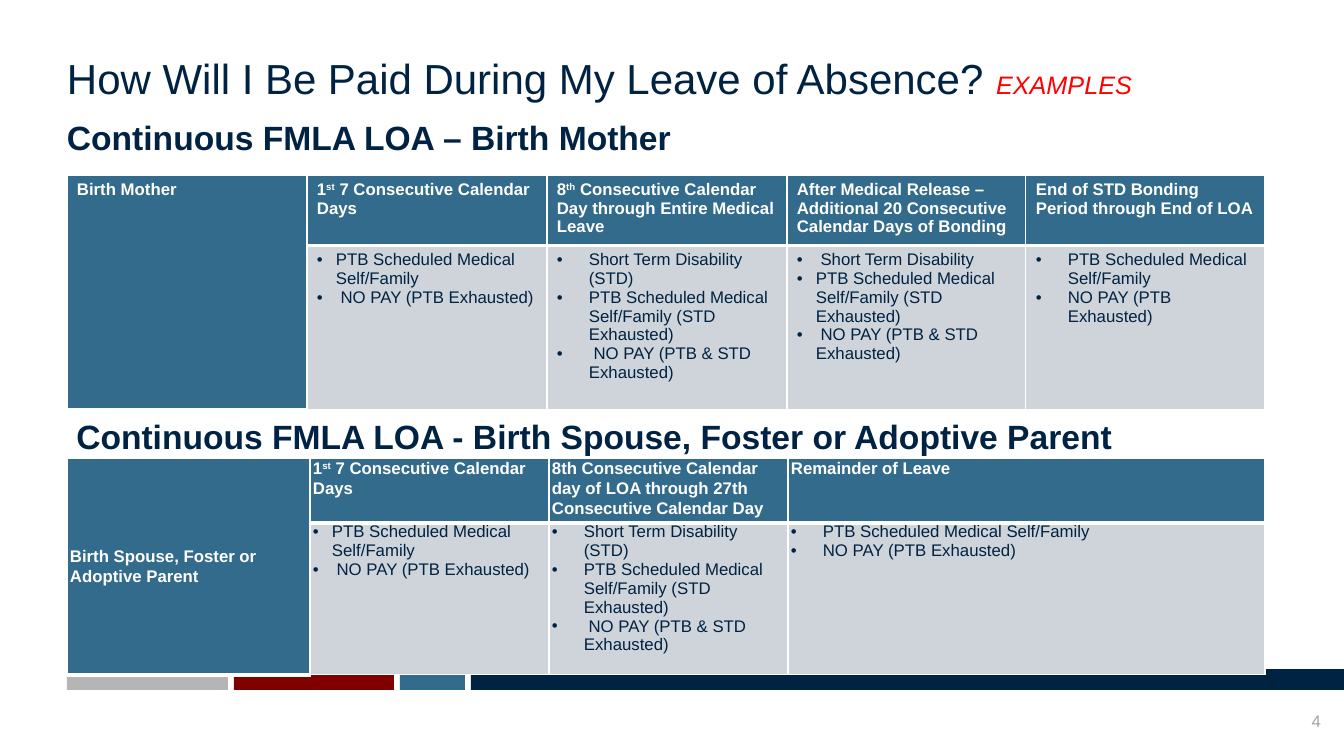
"""Build the leave-of-absence pay examples slide."""
from lxml import etree
from pptx import Presentation, util as u
from pptx.dml.color import RGBColor
from pptx.enum import shapes, text
from pptx.oxml import ns

COLORS = {"navy": "002243", "blue": "326B8B", "maroon": "800000", "silver": "B4B5B4",
          "pale": "CED4DA", "white": "FFFFFF", "red": "FF0000", "gray": "A6A6A6"}
FONT = "Arial"
SLIDE = (1344, 756)
LEFT = 67
NARROW, WIDE = 19, 32

BAR_TOP, BAR_HEIGHT = 669, 21
BARS = [(471, 873, "navy"), (400, 65, "blue"), (234, 160, "maroon"), (67, 161, "silver")]

TITLE_FORMAT = {"size": 30, "color": "navy"}
TAG_FORMAT = {"size": 18, "color": "red", "italic": True}
HEADING_FORMAT = {"size": 24, "color": "navy", "bold": True}
PAGE_FORMAT = {"size": 12, "color": "gray"}
HEAD_FORMAT = {"size": 12, "color": "white", "bold": True}
BODY_FORMAT = {"size": 12, "color": "navy", "bold": False}

TOP, BOTTOM = text.MSO_ANCHOR.TOP, text.MSO_ANCHOR.BOTTOM
START, END = text.PP_ALIGN.LEFT, text.PP_ALIGN.RIGHT
CAPTIONS = [
    ((LEFT, 52, 1221, 51), 0, BOTTOM, START,
     [("How Will I Be Paid During My Leave of Absence? ", TITLE_FORMAT),
      ("EXAMPLES", TAG_FORMAT)]),
    ((LEFT, 103, 921, 51), 14, TOP, START,
     [("Continuous FMLA LOA – Birth Mother", HEADING_FORMAT)]),
    ((LEFT, 402, 1133, 55), 14, TOP, START,
     [(" Continuous FMLA LOA - Birth Spouse, Foster or Adoptive Parent", HEADING_FORMAT)]),
    ((1287, 711, 34, 20), 0, BOTTOM, END, [("4", PAGE_FORMAT)]),
]

FIRST_WEEK = ("1^st^ 7 Consecutive Calendar Days", NARROW,
              ["PTB Scheduled Medical Self/Family", " NO PAY (PTB Exhausted)"])
DISABILITY = ["Short Term Disability (STD)",
              "PTB Scheduled Medical Self/Family (STD Exhausted)",
              " NO PAY (PTB & STD Exhausted)"]
REMAINDER = ["PTB Scheduled Medical Self/Family", "NO PAY (PTB Exhausted)"]

SCHEDULES = [
    {"who": "Birth Mother", "top": 175, "columns": [240, 240, 240, 239, 239],
     "rows": [67, 164], "margins": (10, 5), "spacing": 1.0, "anchor": TOP,
     "periods": [
         FIRST_WEEK,
         ("8^th^ Consecutive Calendar Day through Entire Medical Leave", WIDE, DISABILITY),
         ("After Medical Release – Additional 20 Consecutive Calendar Days of Bonding",
          NARROW, [" Short Term Disability", *DISABILITY[1:]]),
         ("End of STD Bonding Period through End of LOA", WIDE, REMAINDER)]},
    {"who": "Birth Spouse, Foster or Adoptive Parent", "top": 458,
     "columns": [243, 239, 239, 477], "rows": [59, 152], "margins": (3, 0),
     "spacing": 1.07, "anchor": text.MSO_ANCHOR.MIDDLE,
     "periods": [
         FIRST_WEEK,
         ("8th Consecutive Calendar day of LOA through 27th Consecutive Calendar Day",
          WIDE, DISABILITY),
         ("Remainder of Leave", WIDE, REMAINDER)]},
]


def px(length):
    return u.Emu(round(length * 914400 / 100.8))


def rgb(name):
    return RGBColor.from_string(COLORS[name])


def add_run(paragraph, words, style, raised=False):
    run = paragraph.add_run()
    run.text = words
    values = {**style, "name": FONT, "size": u.Pt(style["size"])}
    run.font.color.rgb = rgb(values.pop("color"))
    for key, value in values.items():
        setattr(run.font, key, value)
    if raised:
        run._r.get_or_add_rPr().set("baseline", "30000")


def add_bullet(paragraph, indent):
    properties = paragraph._p.get_or_add_pPr()
    properties.set("marL", str(px(indent)))
    properties.set("indent", str(-px(indent)))
    bullet_font = etree.SubElement(properties, ns.qn("a:buFont"))
    bullet_font.set("typeface", FONT)
    etree.SubElement(properties, ns.qn("a:buChar")).set("char", "•")


def format_cell(cell, fill, margins, bottom_width):
    side, edge = map(px, margins)
    for key, value in {"margin_left": side, "margin_right": side,
                       "margin_top": edge, "margin_bottom": edge}.items():
        setattr(cell, key, value)
    cell.fill.solid()
    cell.fill.fore_color.rgb = rgb(fill)
    properties = cell._tc.get_or_add_tcPr()
    for place, (border, width) in enumerate(
            [("lnL", 1), ("lnR", 1), ("lnT", 1), ("lnB", bottom_width)]):
        line = etree.Element(ns.qn("a:" + border), w=str(u.Pt(width)))
        solid = etree.SubElement(line, ns.qn("a:solidFill"))
        etree.SubElement(solid, ns.qn("a:srgbClr")).set("val", COLORS["white"])
        properties.insert(place, line)


def fill_heading(cell, words, schedule):
    format_cell(cell, "blue", schedule["margins"], 3)
    paragraph = cell.text_frame.paragraphs[0]
    paragraph.line_spacing = schedule["spacing"]
    for place, part in enumerate(words.split("^")):
        add_run(paragraph, part, HEAD_FORMAT, raised=place % 2 == 1)


def fill_payments(cell, payments, indent, schedule):
    format_cell(cell, "pale", schedule["margins"], 1)
    for place, payment in enumerate(payments):
        frame = cell.text_frame
        paragraph = frame.add_paragraph() if place else frame.paragraphs[0]
        add_bullet(paragraph, indent)
        add_run(paragraph, payment, BODY_FORMAT)


def add_schedule(slide, schedule):
    columns, rows = schedule["columns"], schedule["rows"]
    table = slide.shapes.add_table(
        len(rows), len(columns),
        *map(px, (LEFT, schedule["top"], sum(columns), sum(rows)))).table
    for column, width in zip(table.columns, columns):
        column.width = px(width)
    for row, height in zip(table.rows, rows):
        row.height = px(height)
    who = table.cell(0, 0)
    who.merge(table.cell(1, 0))
    fill_heading(who, schedule["who"], schedule)
    who.vertical_anchor = schedule["anchor"]
    for place, (period, indent, payments) in enumerate(schedule["periods"], 1):
        fill_heading(table.cell(0, place), period, schedule)
        fill_payments(table.cell(1, place), payments, indent, schedule)


def add_bar(slide, left, width, color):
    bar = slide.shapes.add_shape(shapes.MSO_SHAPE.RECTANGLE,
                                 *map(px, (left, BAR_TOP, width, BAR_HEIGHT)))
    bar.shadow.inherit = False
    bar.fill.solid()
    bar.fill.fore_color.rgb = rgb(color)
    bar.line.fill.background()


def add_caption(slide, place, inset, anchor, alignment, runs):
    frame = slide.shapes.add_textbox(*map(px, place)).text_frame
    for key, value in {"word_wrap": True, "vertical_anchor": anchor, "margin_left": 0,
                       "margin_right": 0, "margin_top": px(inset),
                       "margin_bottom": 0}.items():
        setattr(frame, key, value)
    paragraph = frame.paragraphs[0]
    paragraph.alignment = alignment
    for words, style in runs:
        add_run(paragraph, words, style)


def main():
    deck = Presentation()
    deck.slide_width, deck.slide_height = map(px, SLIDE)
    slide = deck.slides.add_slide(deck.slide_layouts[6])
    for bar in BARS:
        add_bar(slide, *bar)
    for caption in CAPTIONS:
        add_caption(slide, *caption)
    for schedule in SCHEDULES:
        add_schedule(slide, schedule)
    deck.save("out.pptx")


if __name__ == "__main__":
    main()
